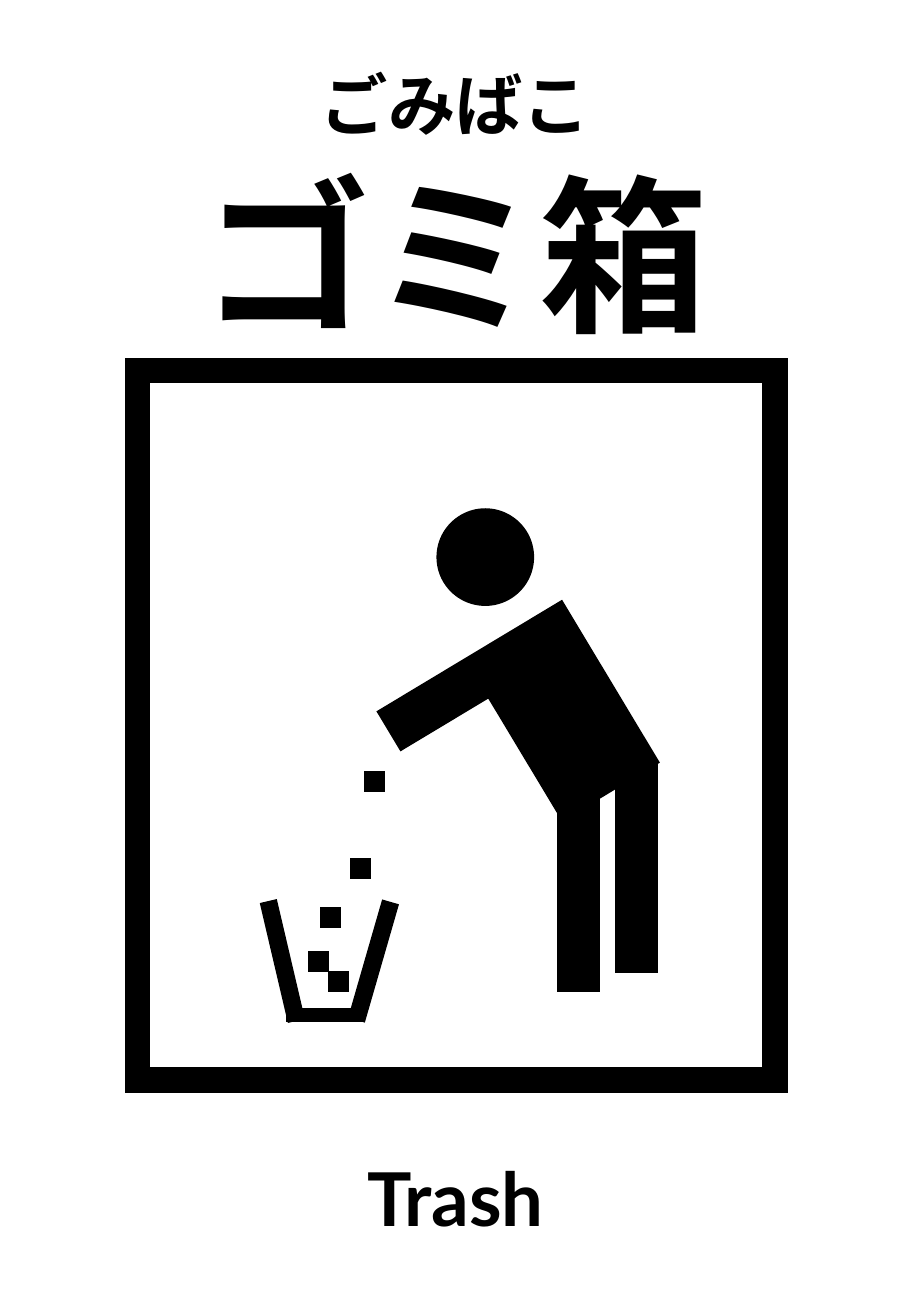
from pptx import Presentation
from pptx.dml.color import RGBColor
from pptx.enum.shapes import MSO_SHAPE
from pptx.enum.text import MSO_ANCHOR, MSO_AUTO_SIZE, PP_ALIGN
from pptx.oxml.ns import qn
from pptx.util import Pt
from lxml import etree

RECT, OVAL = MSO_SHAPE.RECTANGLE, MSO_SHAPE.OVAL
TOP, CENTER, FIXED = MSO_ANCHOR.TOP, PP_ALIGN.CENTER, MSO_AUTO_SIZE.NONE

# Content, all lengths in points
WIDTH, HEIGHT = 540, 779.8
COLORS = {"ink": "000000", "page": "FFFFFF"}
KANJI, LATIN = "Noto Sans CJK JP", "Lato"
TITLE = ("ゴミ箱", 78.5, 128.2, 100)
KANA = ("ごみばこ", 31, 55.4, 40)
ENGLISH = ("Trash", 679, 60.5, 44)
LEAD = 1.275  # line height of the Japanese text, in ems

FRAME = (81.4, 219.6, 378, 420.5)
HEAD = (259.2, 301.7, 56.9, 56.9)
BODY = (243.4, 380.9, 127.4, 111.6)
ARM, TRUNK = 26.7, 66.7  # thickness of the two parts of the body
LEGS = [(330.5, 463), (365, 451.4)]
LEG = (24.5, 124.6)
SIDES = [(162.7, -13.2), (216.7, 16.1)]  # left edge, turn
BASE = (170.3, 598, 45.4, 7.2)
SCRAPS = [(182.9, 563.8), (195.1, 576), (190.1, 537.8),
          (208.1, 509), (216, 457.2)]
SCRAP = (11.5, 11.5)


def color(name):
    return RGBColor.from_string(COLORS[name])


def write(shape, text, top, height, size, font=KANJI, lead=None):
    shape.left, shape.top = Pt(0), Pt(top)
    shape.width, shape.height = Pt(WIDTH), Pt(height)
    frame = shape.text_frame
    frame.word_wrap, frame.auto_size = True, FIXED
    frame.vertical_anchor = TOP
    frame.margin_bottom = Pt(0)
    para = frame.paragraphs[0]
    para.alignment = CENTER
    if lead:
        para.line_spacing = Pt(size * lead)
    run = para.add_run()
    run.text = text
    run.font.size, run.font.bold = Pt(size), True
    run.font.name = font
    run.font.color.rgb = color("ink")
    east = etree.SubElement(run.font._element, qn("a:ea"))
    east.set("typeface", font)


def paint(shape, fill="ink", line=1, turn=0):
    shape.shadow.inherit = False
    shape.rotation = turn
    shape.fill.solid()
    shape.fill.fore_color.rgb = color(fill)
    shape.line.color.rgb = color("ink")
    shape.line.width = Pt(line)
    edge = shape.line._get_or_add_ln()
    etree.SubElement(edge, qn("a:miter")).set("lim", "800000")


def draw(shapes, kind, area, **style):
    paint(shapes.add_shape(kind, *(Pt(n) for n in area)), **style)


def bend(shapes, area, **style):
    left, top, width, height = area
    right, low = left + width, top + height
    inner, shelf = left + TRUNK, low - ARM
    rest = [(inner, top), (inner, shelf), (right, shelf),
            (right, low), (left, low)]
    path = shapes.build_freeform(Pt(left), Pt(top))
    path.add_line_segments([(Pt(x), Pt(y)) for x, y in rest], close=True)
    paint(path.convert_to_shape(), **style)


def main():
    deck = Presentation()
    deck.slide_width, deck.slide_height = Pt(WIDTH), Pt(HEIGHT)
    slide = deck.slides.add_slide(deck.slide_layouts[5])
    shapes = slide.shapes

    # Frame and words
    draw(shapes, RECT, FRAME, fill="page", line=15)
    title = shapes.title
    shapes._spTree.append(title._element)
    write(title, *TITLE, lead=LEAD)
    write(shapes.add_textbox(0, 0, 0, 0), *KANA, lead=LEAD)
    write(shapes.add_textbox(0, 0, 0, 0), *ENGLISH, font=LATIN)

    # Bin
    bin = shapes.add_group_shape().shapes
    for left, turn in SIDES:
        draw(bin, RECT, (left, 533.5, 9.4, 72), turn=turn)
    draw(bin, RECT, BASE)

    # Person
    draw(shapes, OVAL, HEAD)
    bend(shapes, BODY, turn=149)

    # Legs and falling scraps
    for spots, size in ((LEGS, LEG), (SCRAPS, SCRAP)):
        for spot in spots:
            draw(shapes, RECT, spot + size)

    deck.save("out.pptx")


if __name__ == "__main__":
    main()
